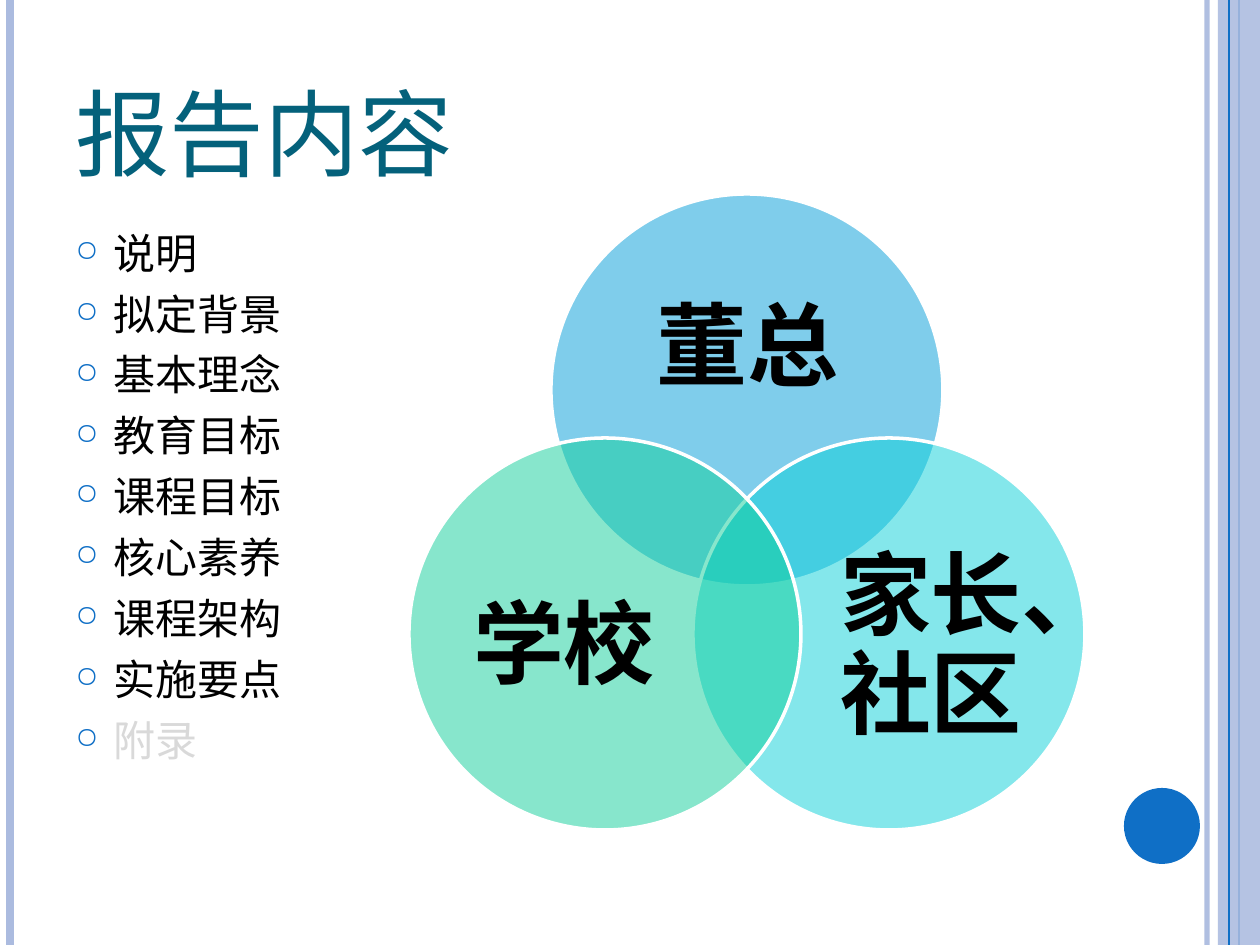
from lxml import etree
from pptx import Presentation
from pptx.dml.color import RGBColor
from pptx.enum.shapes import MSO_CONNECTOR, MSO_SHAPE
from pptx.enum.text import MSO_ANCHOR, PP_ALIGN
from pptx.oxml.ns import qn
from pptx.util import Pt

EMU_PER_PX = 914400 / 126
RECT, OVAL = MSO_SHAPE.RECTANGLE, MSO_SHAPE.OVAL
STRAIGHT = MSO_CONNECTOR.STRAIGHT
TOP, MIDDLE, BOTTOM = MSO_ANCHOR.TOP, MSO_ANCHOR.MIDDLE, MSO_ANCHOR.BOTTOM
LEFT, CENTER = PP_ALIGN.LEFT, PP_ALIGN.CENTER

WIDTH, HEIGHT = 1260, 945
BLUE, PALE, WHITE = "0F6FC6", "ABBBDF", "FFFFFF"
TOPICS = ["说明", "拟定背景", "基本理念", "教育目标", "课程目标",
          "核心素养", "课程架构", "实施要点", "附录"]
CIRCLE = 392
VENN = [
    ("董总", "009DD9", (551, 194), (604, 262, 287, 176)),
    ("家长、社区", "0BD0D9", (693, 438), (813, 541, 236, 215)),
    ("学校", "10CF9B", (409, 438), (446, 541, 236, 215)),
]


def px(n):
    return round(n * EMU_PER_PX)


def rgb(color):
    return RGBColor.from_string(color)


def sub(parent, tag, **attrs):
    return etree.SubElement(parent, qn(tag), {k: str(v) for k, v in attrs.items()})


def paint(fill, color, alpha=100):
    fill.solid()
    fill.fore_color.rgb = rgb(color)
    if alpha < 100:
        clr = fill._xPr.find(qn("a:solidFill"))[0]
        sub(clr, "a:alpha", val=alpha * 1000)


def add_text(p, text, size=24, color="000000", bold=False, font="TeX Gyre Schola"):
    r = p.add_run()
    r.text = text
    r.font.size = Pt(size)
    r.font.bold = bold
    r.font.name = font
    r.font.color.rgb = rgb(color)


class Slide:
    """Holds the current slide and draws its elements in one style."""

    def __init__(self, prs):
        self.shapes = prs.slides.add_slide(prs.slide_layouts[6]).shapes

    def rule(self, x, weight, color, alpha=100):
        s = self.shapes.add_connector(STRAIGHT, px(x), 0, px(x), px(HEIGHT))
        s.line.width = Pt(weight)
        paint(s.line.fill, color, alpha)
        sub(s._element.spPr, "a:effectLst")

    def shape(self, kind, x, y, w, h, color, alpha=100, outline=None):
        s = self.shapes.add_shape(kind, px(x), px(y), px(w), px(h))
        s.shadow.inherit = False
        paint(s.fill, color, alpha)
        if outline:
            s.line.width = Pt(2)
            paint(s.line.fill, outline)
        else:
            s.line.fill.background()

    def text(self, box, lines, anchor=TOP, align=LEFT, inset=True, spacing=None,
             bullets=False, last_color=None, **fmt):
        s = self.shapes.add_textbox(*map(px, box))
        tf = s.text_frame
        tf.word_wrap = True
        tf.vertical_anchor = anchor
        if not inset:
            tf.margin_left = tf.margin_right = tf.margin_top = tf.margin_bottom = 0
        for i, line in enumerate(lines):
            p = tf.add_paragraph() if i else tf.paragraphs[0]
            p.alignment = align
            p.line_spacing = spacing
            if bullets:
                self.bullet(p)
            if last_color and i == len(lines) - 1:
                fmt["color"] = last_color
            add_text(p, line, **fmt)

    def bullet(self, p):
        p.space_before = Pt(6)
        pPr = p._p.get_or_add_pPr()
        pPr.set("marL", str(px(38)))
        pPr.set("indent", str(-px(38)))
        sub(sub(pPr, "a:buClr"), "a:srgbClr", val=BLUE)
        sub(pPr, "a:buSzPct", val=70000)
        sub(pPr, "a:buChar", char="○")


def main():
    prs = Presentation()
    prs.slide_width, prs.slide_height = px(WIDTH), px(HEIGHT)
    slide = Slide(prs)

    slide.rule(1207, 3, PALE, alpha=93)
    slide.rule(10, 4.5, PALE)
    slide.rule(1239, 1.5, BLUE)
    slide.shape(RECT, 1218, 0, 42, HEIGHT, PALE, alpha=87)
    slide.rule(1229, 0.75, BLUE)
    slide.shape(OVAL, 1124, 788, 76, 76, BLUE)

    slide.text((63, 38, 1029, 157), ["报告内容"], anchor=BOTTOM, size=54, color="04617B")
    slide.text((63, 221, 504, 630), TOPICS, bullets=True, last_color="D9D9D9")

    for label, color, corner, box in VENN:
        slide.shape(OVAL, *corner, CIRCLE, CIRCLE, color, alpha=50, outline=WHITE)
        slide.text(box, [label], anchor=MIDDLE, align=CENTER, inset=False,
                   spacing=0.9, size=52, bold=True)

    prs.save("out.pptx")


if __name__ == "__main__":
    main()
